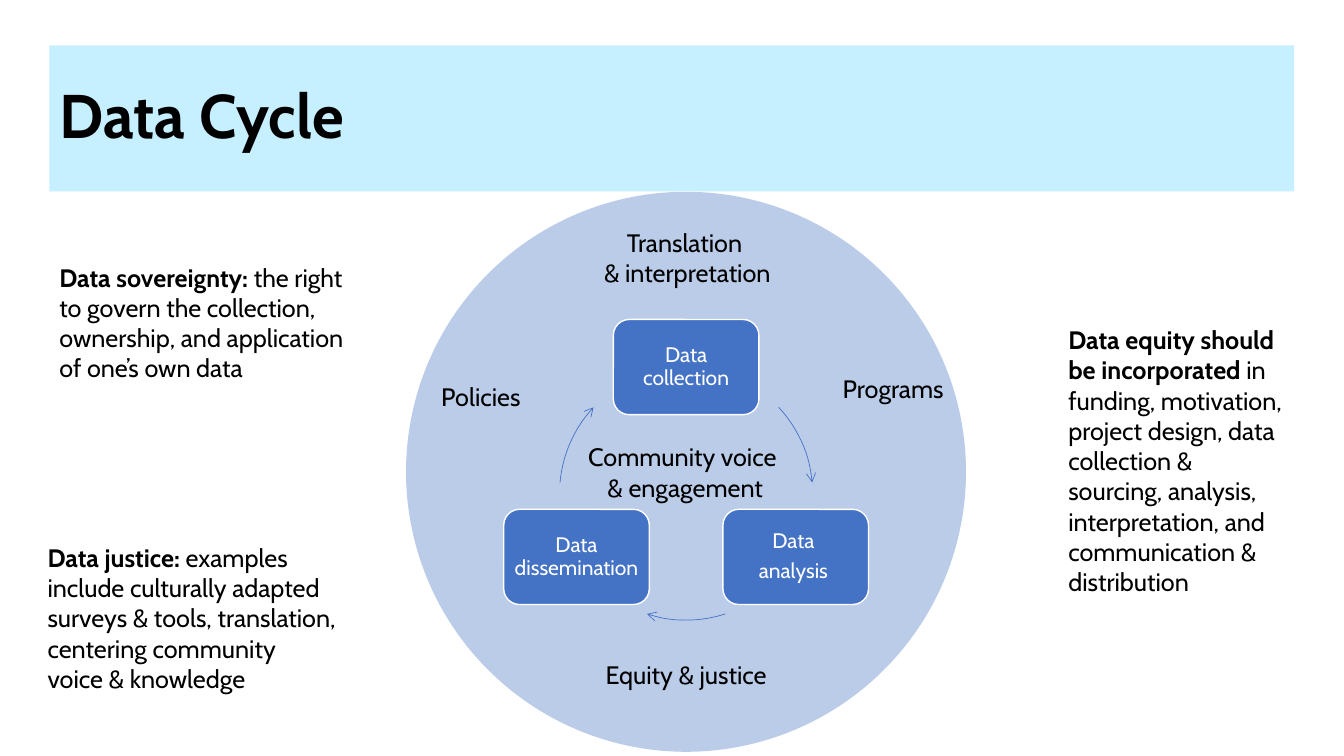
from math import cos, radians, sin

from lxml import etree
from pptx import Presentation
from pptx.dml.color import RGBColor
from pptx.enum import shapes, text
from pptx.oxml import ns
from pptx.util import Pt

FONT = "Cabin"
BLACK, WHITE, BLUE, PALE_BLUE = "000000", "FFFFFF", "4472C4", "C6EFFF"
LEFT, CENTER = text.PP_ALIGN.LEFT, text.PP_ALIGN.CENTER
TOP, MIDDLE = text.MSO_ANCHOR.TOP, text.MSO_ANCHOR.MIDDLE


def color(hex_string):
    return RGBColor.from_string(hex_string)


def apply(target, values):
    for name, value in values.items():
        setattr(target, name, value)


def add_shape(slide, kind, box, fill=None, line=None, width=1):
    shape = slide.shapes.add_shape(kind, *map(Pt, box))
    shape.shadow.inherit = False
    if fill:
        shape.fill.solid()
        shape.fill.fore_color.rgb = color(fill)
    else:
        shape.fill.background()
    if line:
        shape.line.color.rgb = color(line)
        shape.line.width = Pt(width)
    else:
        shape.line.fill.background()
    return shape


def write(shape, paragraphs, size=18, ink=BLACK, align=LEFT, anchor=TOP,
          inset=7.2, spacing=1.0, after=0):
    """Each paragraph is a list of (text, bold) runs."""
    frame = shape.text_frame
    apply(frame, {"word_wrap": True, "vertical_anchor": anchor,
                  "margin_left": Pt(inset), "margin_right": Pt(inset)})
    for index, runs in enumerate(paragraphs):
        paragraph = frame.add_paragraph() if index else frame.paragraphs[0]
        apply(paragraph, {"alignment": align, "line_spacing": spacing,
                          "space_after": Pt(after)})
        for words, bold in runs:
            run = paragraph.add_run()
            run.text = words
            apply(run.font, {"name": FONT, "size": Pt(size), "bold": bold})
            run.font.color.rgb = color(ink)


def add_text(slide, box, paragraphs, align=LEFT):
    write(slide.shapes.add_textbox(*map(Pt, box)), paragraphs, align=align)


def add_title(slide, box):
    banner = add_shape(slide, shapes.MSO_SHAPE.RECTANGLE, box, PALE_BLUE)
    write(banner, [[("Data Cycle", True)]], size=44, anchor=MIDDLE, spacing=0.9)


def add_cycle(slide, box):
    """Three steps, spaced evenly around a ring, joined by clockwise arcs."""
    left, top, diameter, _ = box
    radius = diameter / 2
    center_x, center_y = left + radius, top + radius
    step_width, step_height = 104, 68
    steps = [(-90, ["Data collection"]),
             (30, ["Data ", "analysis "]),
             (150, ["Data dissemination"])]
    arcs = [(-43, -5), (72, 108), (185, 223)]

    for (angle, lines), (start, end) in zip(steps, arcs):
        # Step
        x = center_x + radius * cos(radians(angle)) - step_width / 2
        y = center_y + radius * sin(radians(angle)) - step_height / 2
        step = add_shape(slide, shapes.MSO_SHAPE.ROUNDED_RECTANGLE,
                         (x, y, step_width, step_height), BLUE, WHITE)
        write(step, [[(line, False)] for line in lines], size=15, ink=WHITE,
              align=CENTER, anchor=MIDDLE, inset=4.3, spacing=0.9, after=5.25)

        # Arc to the next step; the adjustments count 0.6 per degree
        arc = add_shape(slide, shapes.MSO_SHAPE.ARC, box, line=BLUE, width=0.5)
        arc.adjustments[0] = start % 360 * 0.6
        arc.adjustments[1] = end % 360 * 0.6
        etree.SubElement(arc.line._get_or_add_ln(), ns.qn("a:tailEnd"), type="arrow")


def add_community(slide, box):
    left, top, width, height = box
    disc = add_shape(slide, shapes.MSO_SHAPE.OVAL, box, BLUE)
    fill = disc.fill._xPr.find(".//" + ns.qn("a:srgbClr"))
    etree.SubElement(fill, ns.qn("a:alpha"), val="36000")

    add_cycle(slide, (left + 109.7, top + 125.2, 180.8, 180.8))

    # Labels: offset from the disc, width, lines, alignment
    labels = [
        (93, 21.5, 216, ["Translation ", "& interpretation"], CENTER),
        (-54.5, 131.7, 216, ["Policies"], CENTER),
        (91.5, 175, 216, ["Community voice ", "& engagement"], CENTER),
        (240, 126, 216, ["Programs"], CENTER),
        (135.5, 330.3, 174, ["Equity & justice"], LEFT),
    ]
    for x, y, label_width, lines, align in labels:
        add_text(slide, (left + x, top + y, label_width, 7.2 + 22 * len(lines)),
                 [[(line, False)] for line in lines], align)


def add_definition(slide, box, term, meaning):
    add_text(slide, box, [[(term, True), (meaning, False)]])


def main():
    presentation = Presentation()
    apply(presentation, {"slide_width": Pt(960), "slide_height": Pt(540)})
    slide = presentation.slides.add_slide(presentation.slide_layouts[6])

    # Disc and banner
    add_community(slide, (290, 137, 400, 400))
    add_title(slide, (35.3, 32.4, 889.2, 104.4))

    # Definitions at the sides
    add_definition(
        slide, (35.3, 183.6, 220.3, 116.6), "Data sovereignty: ",
        "the right to govern the collection, ownership, and application "
        "of one’s own data")
    add_definition(
        slide, (26.9, 383.8, 220.3, 116.6), "Data justice:",
        " examples include culturally adapted surveys & tools, translation, "
        "centering community voice & knowledge")
    add_definition(
        slide, (756, 228.2, 173.5, 203.8), "Data equity should be incorporated ",
        "in funding, motivation, project design, data collection & sourcing, "
        "analysis, interpretation, and communication & distribution")

    presentation.save("out.pptx")


if __name__ == "__main__":
    main()
